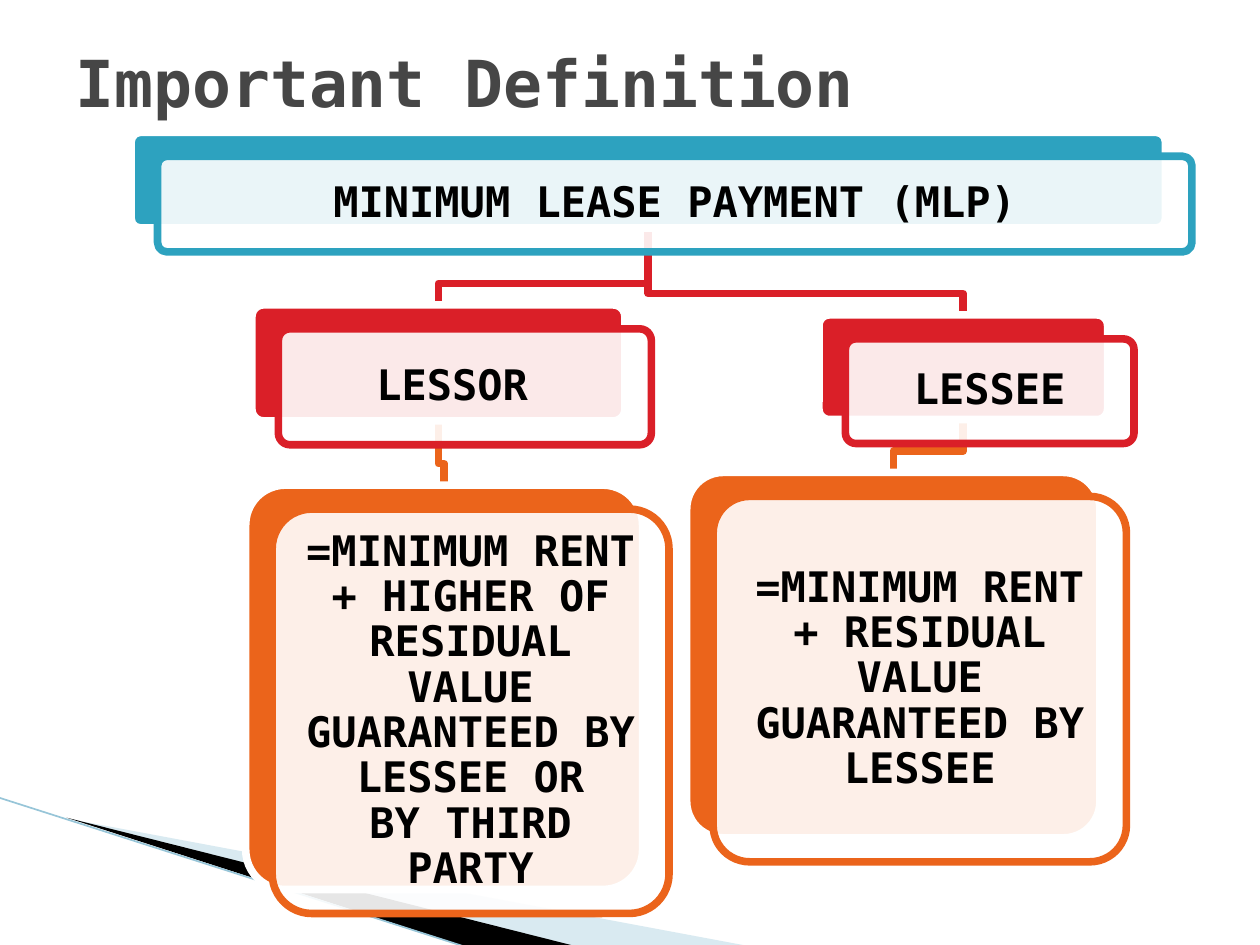
from lxml.etree import SubElement
from pptx import Presentation
from pptx.dml.color import RGBColor
from pptx.enum.shapes import MSO_CONNECTOR, MSO_SHAPE
from pptx.enum.text import MSO_ANCHOR, PP_ALIGN
from pptx.oxml.ns import qn
from pptx.util import Inches, Pt


def paint(color_format, color, alpha=None):
    """Set a fill's or line's colour, with an optional opacity in percent."""
    color_format.solid()
    color_format.fore_color.rgb = RGBColor.from_string(color)
    if alpha is not None:
        element = color_format._xPr.find(".//" + qn("a:srgbClr"))
        SubElement(element, qn("a:alpha"), val=str(alpha * 1000))


def write(frame, text, size, color, align, spacing=1.0):
    frame.word_wrap = True
    frame.vertical_anchor = MSO_ANCHOR.MIDDLE
    frame.text = text
    para = frame.paragraphs[0]
    para.alignment = align
    para.line_spacing = spacing
    span = para.runs
    for piece in span:
        piece.font.name = "DejaVu Sans Mono"
        piece.font.size = Pt(size)
        piece.font.bold = True
        piece.font.color.rgb = RGBColor.from_string(color)


TEAL, RED, ORANGE, WHITE = "2DA2BF", "DA1F28", "EB641B", "FFFFFF"
LINE_WIDTH = Pt(4.33)
OFFSET_X, OFFSET_Y = 0.21, 0.19  # front card relative to back card
BEND = 0.17  # height of the last link segment

deck = Presentation()
deck.slide_width, deck.slide_height = Inches(10), Inches(7.5)
page = deck.slides.add_slide(deck.slide_layouts[5])

# Corner decoration
swooshes = [
    ([(0.55, 6.5), (5.95, 7.51), (4.56, 7.51)], "A0CBDC", 40),
    ([(0.53, 6.49), (4.57, 7.51), (3.72, 7.52)], "000000", None),
]
for points, color, alpha in swooshes:
    corners = [(Inches(x), Inches(y)) for x, y in points]
    builder = page.shapes.build_freeform(*corners[0])
    builder.add_line_segments(corners[1:], close=True)
    swoosh = builder.convert_to_shape()
    swoosh.shadow.inherit = False
    swoosh.line.fill.background()
    paint(swoosh.fill, color, alpha)

edge = page.shapes.add_connector(
    MSO_CONNECTOR.STRAIGHT, Inches(-0.01), Inches(6.33), Inches(3.71), Inches(7.52))
paint(edge.line.fill, "97C5D8")
edge.line.width = Pt(0.95)
SubElement(edge._element.spPr, qn("a:effectLst"))

# Hierarchy: name -> (parent, left, top, width, height, colour, text)
cards = {
    "payment": (None, 1.04, 1.05, 8.21, 0.76, TEAL, "MINIMUM LEASE PAYMENT (MLP)"),
    "lessor": ("payment", 2, 2.42, 2.96, 0.92, RED, "LESSOR "),
    "lessor rule": ("lessor", 1.95, 3.85, 3.15, 3.21, ORANGE,
                    "=MINIMUM RENT + HIGHER OF RESIDUAL VALUE GUARANTEED BY "
                    "LESSEE OR\vBY THIRD PARTY"),
    "lessee": ("payment", 6.5, 2.5, 2.29, 0.83, RED, "LESSEE"),
    "lessee rule": ("lessee", 5.45, 3.75, 3.28, 2.9, ORANGE,
                    "=MINIMUM RENT + RESIDUAL VALUE GUARANTEED BY LESSEE"),
}

# Links lie behind the cards, from a parent's bottom to a child's top
for parent, left, top, width, height, color, text in cards.values():
    if parent is None:
        continue
    _, parent_left, parent_top, parent_width, parent_height, _, _ = cards[parent]
    start_x, end_x = Inches(parent_left + parent_width / 2), Inches(left + width / 2)
    bend_y = Inches(top - BEND)
    builder = page.shapes.build_freeform(start_x, Inches(parent_top + parent_height))
    builder.add_line_segments(
        [(start_x, bend_y), (end_x, bend_y), (end_x, Inches(top))], close=False)
    link = builder.convert_to_shape()
    link.shadow.inherit = False
    link.fill.background()
    paint(link.line.fill, color)
    link.line.width = LINE_WIDTH

for _, left, top, width, height, color, text in cards.values():
    layers = [
        (left, top, color, None, WHITE),
        (left + OFFSET_X, top + OFFSET_Y, WHITE, 90, color),
    ]
    for x, y, fill, alpha, outline in layers:
        card = page.shapes.add_shape(
            MSO_SHAPE.ROUNDED_RECTANGLE, Inches(x), Inches(y), Inches(width), Inches(height))
        card.adjustments[0] = 0.1
        card.shadow.inherit = False
        paint(card.fill, fill, alpha)
        paint(card.line.fill, outline)
        card.line.width = LINE_WIDTH
    frame = card.text_frame
    frame.margin_left = frame.margin_right = Inches(0.1)
    frame.margin_top = frame.margin_bottom = Inches(0.1)
    write(frame, text, 24, "000000", PP_ALIGN.CENTER, 0.9)

title = page.shapes.title
title.left, title.top, title.width, title.height = (
    Inches(0.5), Inches(0.3), Inches(9), Inches(0.7))
write(title.text_frame, "Important Definition", 37, "464646", PP_ALIGN.LEFT)

deck.save("out.pptx")
